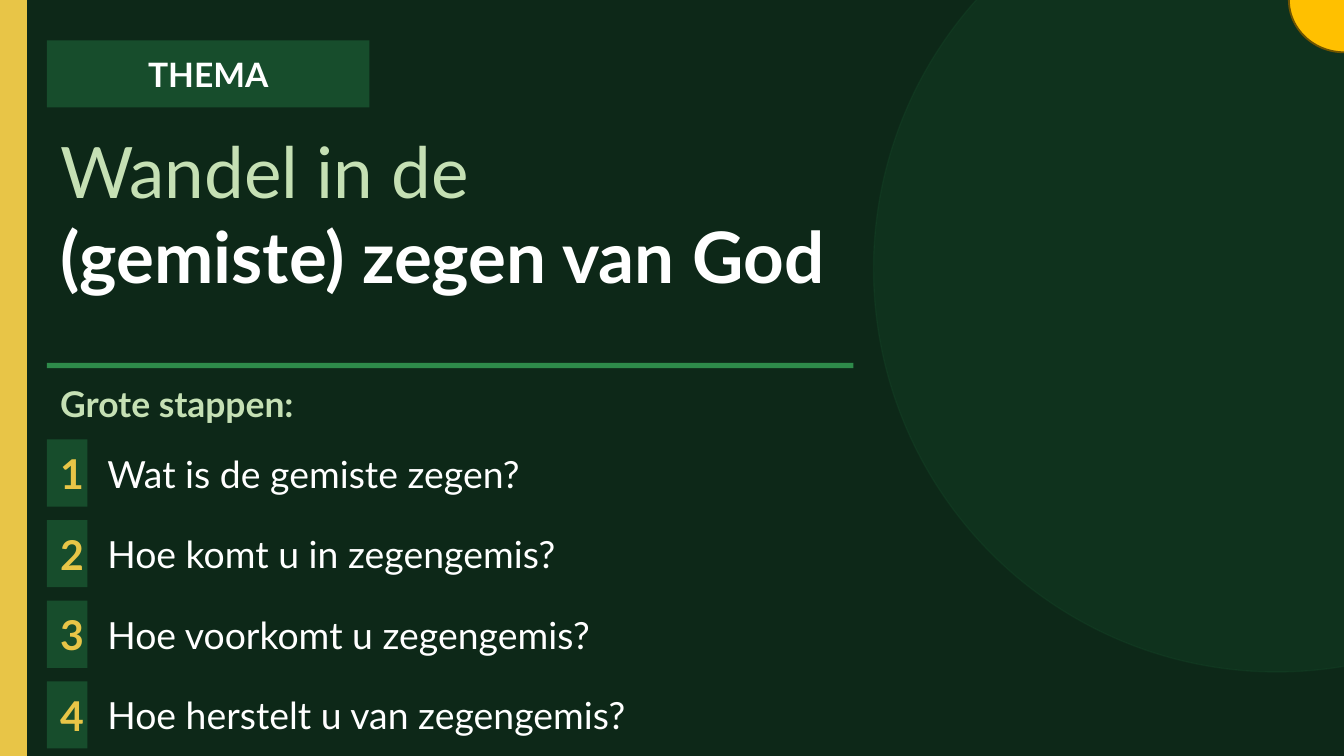
from dataclasses import dataclass

from lxml.etree import SubElement
from pptx import Presentation
from pptx.dml.color import RGBColor
from pptx.enum.shapes import MSO_SHAPE
from pptx.enum.text import MSO_ANCHOR, PP_ALIGN
from pptx.oxml.ns import qn
from pptx.shapes.autoshape import Shape
from pptx.slide import Slide
from pptx.util import Pt

COLORS = {
    "background": "0D2818",
    "panel": "174D2C",
    "rule": "2E8B4A",
    "gold": "E8C547",
    "sun": "FFC000",
    "sun_edge": "705400",
    "mint": "C5E0B4",
    "white": "FFFFFF",
}
FONT = "Lato"
LEFT = 25.2
ROW_HEIGHT = 36
STEPS_TOP = 235.44
STEP_PITCH = 43.2
STEPS = (
    "Wat is de gemiste zegen?",
    "Hoe komt u in zegengemis?",
    "Hoe voorkomt u zegengemis?",
    "Hoe herstelt u van zegengemis?",
)


@dataclass(frozen=True)
class Box:
    left: float
    top: float
    width: float
    height: float

    def lengths(self) -> tuple[Pt, Pt, Pt, Pt]:
        return Pt(self.left), Pt(self.top), Pt(self.width), Pt(self.height)


@dataclass(frozen=True)
class Line:
    text: str
    color: str
    bold: bool = False


def rgb(name: str) -> RGBColor:
    return RGBColor.from_string(COLORS[name])


def add_block(slide: Slide, box: Box, fill: str, kind=MSO_SHAPE.RECTANGLE,
              edge: str | None = None, edge_width: float = 1) -> Shape:
    shape = slide.shapes.add_shape(kind, *box.lengths())
    shape.shadow.inherit = False
    shape.fill.solid()
    shape.fill.fore_color.rgb = rgb(fill)
    if edge is None:
        shape.line.fill.background()
    else:
        shape.line.color.rgb = rgb(edge)
        shape.line.width = Pt(edge_width)
    return shape


def set_opacity(shape: Shape, percent: int) -> None:
    """Apply one opacity to both the fill and the outline."""
    for color in shape._element.spPr.iter(qn("a:srgbClr")):
        SubElement(color, qn("a:alpha"), val=str(percent * 1000))


def add_text(slide: Slide, box: Box, *lines: Line, size: float,
             align=PP_ALIGN.LEFT, anchor=MSO_ANCHOR.MIDDLE) -> None:
    frame = slide.shapes.add_textbox(*box.lengths()).text_frame
    frame.word_wrap = True
    frame.vertical_anchor = anchor
    for index, line in enumerate(lines):
        paragraph = frame.add_paragraph() if index else frame.paragraphs[0]
        paragraph.alignment = align
        run = paragraph.add_run()
        run.text = line.text
        run.font.name = FONT
        run.font.size = Pt(size)
        run.font.bold = line.bold
        run.font.color.rgb = rgb(line.color)


def add_step(slide: Slide, number: int, question: str) -> None:
    top = STEPS_TOP + (number - 1) * STEP_PITCH
    badge = Box(LEFT, top, 21.6, ROW_HEIGHT)
    add_block(slide, badge, "panel")
    add_text(slide, badge, Line(str(number), "gold", True), size=22, align=PP_ALIGN.CENTER)
    add_text(slide, Box(50.4, top, 644.4, ROW_HEIGHT), Line(question, "white"), size=20)


def main() -> None:
    presentation = Presentation()
    presentation.slide_width, presentation.slide_height = Pt(720), Pt(405)
    slide = presentation.slides.add_slide(presentation.slide_layouts[6])
    slide.background.fill.solid()
    slide.background.fill.fore_color.rgb = rgb("background")

    circle = add_block(slide, Box(468, -72, 432, 432), "panel", MSO_SHAPE.OVAL, "panel", 0.75)
    set_opacity(circle, 28)
    add_block(slide, Box(0, 0, 14.4, 405), "gold")

    label = Box(LEFT, 21.6, 172.8, ROW_HEIGHT)
    add_block(slide, label, "panel")
    add_text(slide, label, Line("THEMA", "white", True), size=18, align=PP_ALIGN.CENTER)

    add_text(slide, Box(LEFT, 64.8, 504, 122.4),
             Line("Wandel in de", "mint"),
             Line("(gemiste) zegen van God", "white", True),
             size=38, anchor=MSO_ANCHOR.TOP)
    add_block(slide, Box(LEFT, 194.4, 432, 2.88), "rule")
    add_text(slide, Box(LEFT, 201.6, 324, 28.8), Line("Grote stappen:", "mint", True), size=19)

    for number, question in enumerate(STEPS, start=1):
        add_step(slide, number, question)

    add_block(slide, Box(690.48, -28.08, 59.76, 56.16), "sun", MSO_SHAPE.OVAL, "sun_edge")
    presentation.save("out.pptx")


if __name__ == "__main__":
    main()
